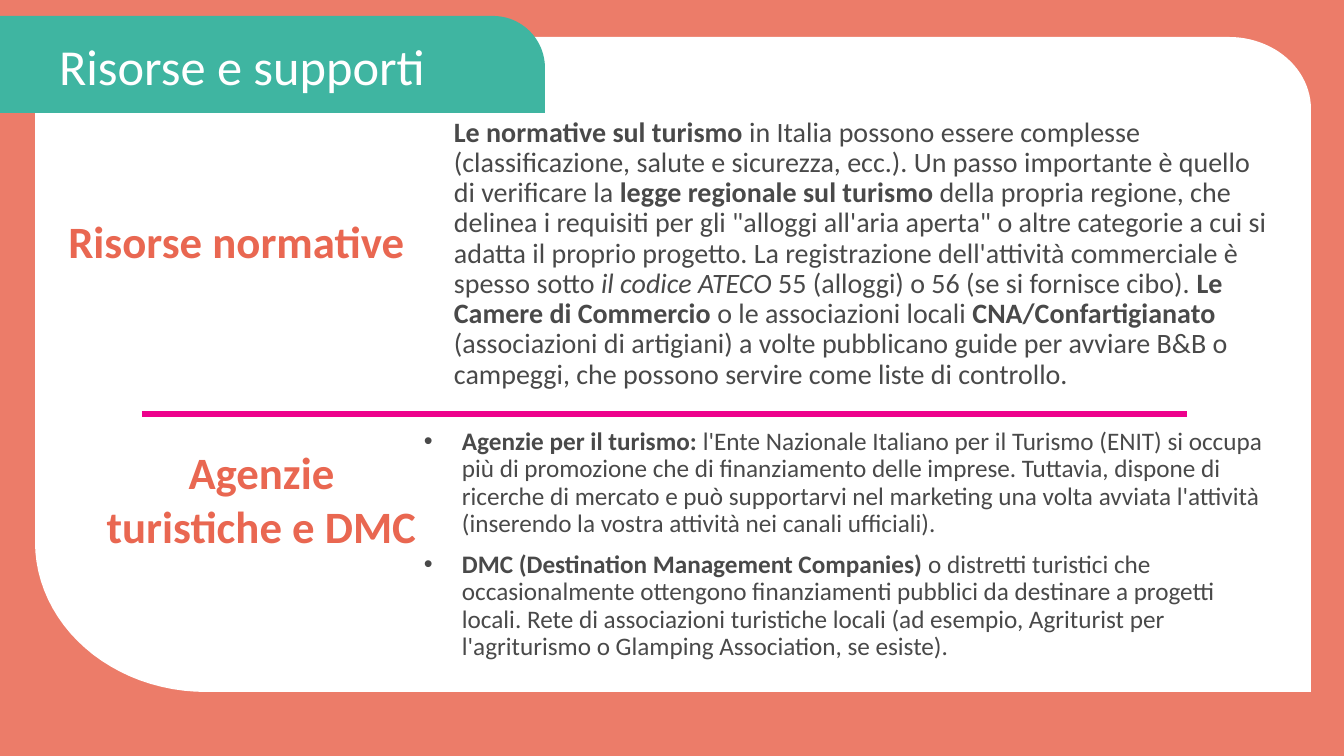
import math
import pptx
import pptx.util
import pptx.dml.color
import pptx.enum.shapes
import pptx.enum.text
import pptx.oxml.xmlchemy
from lxml import etree

PX = 914400 / 100.8
ALIGN = pptx.enum.text.PP_ALIGN
ANCHOR = pptx.enum.text.MSO_ANCHOR
CORAL, TEAL, PINK = "EC7C69", "3FB5A1", "ED028C"
GREY, RED, WHITE = "494949", "E96751", "FFFFFF"


def color(code):
    return pptx.dml.color.RGBColor.from_string(code)


def write(shape, box, paras, size, tint, align=ALIGN.LEFT, space=0.9, bullet=False):
    """Place a text shape and fill it with paragraphs of (text, style) runs."""
    for name, val in zip(("left", "top", "width", "height"), box):
        setattr(shape, name, round(val * PX))
    frame = shape.text_frame
    frame.word_wrap = True
    frame.auto_size = pptx.enum.text.MSO_AUTO_SIZE.NONE
    for num, runs in enumerate(paras):
        para = frame.add_paragraph() if num else frame.paragraphs[0]
        para.alignment, para.line_spacing = align, space
        para.space_before = pptx.util.Pt(10 if num else 0)
        if bullet:
            props = para._p.get_or_add_pPr()
            props.set("marL", str(round(38 * PX)))
            props.set("indent", str(round(-38 * PX)))
            for tag, key, val in (("buFont", "typeface", "Arial"), ("buChar", "char", "•")):
                etree.SubElement(props, pptx.oxml.ns.qn("a:" + tag)).set(key, val)
        for text, style in runs:
            run = para.add_run()
            run.text = text
            font = {"name": "Calibri", "size": pptx.util.Pt(size),
                    "bold": style == "b", "italic": style == "i"}
            for name, val in font.items():
                setattr(run.font, name, val)
            run.font.color.rgb = color(tint)


deck = pptx.Presentation()
deck.slide_width, deck.slide_height = round(1344 * PX), round(756 * PX)
slide = deck.slides.add_slide(deck.slide_layouts[5])
shapes = slide.shapes
slide.background.fill.solid()
slide.background.fill.fore_color.rgb = color(CORAL)

# White panel and title tab: top right and bottom left corners are rounded
STEPS = 24
for left, top, right, low, (rx, ry), (bx, by), fill in (
        (35, 37, 1311, 692, (82, 72), (171, 150), WHITE),
        (0, 16, 545, 113, (52, 52), (0, 0), TEAL)):
    turns = [math.pi / 2 * k / STEPS for k in range(STEPS + 1)]
    dots = [(right - rx + rx * math.sin(t), top + ry - ry * math.cos(t)) for t in turns]
    dots.append((right, low))
    dots += [(left + bx - bx * math.sin(t), low - by + by * math.cos(t)) for t in turns]
    form = shapes.build_freeform(round(left * PX), round(top * PX))
    form.add_line_segments([(round(x * PX), round(y * PX)) for x, y in dots])
    panel = form.convert_to_shape()
    panel.shadow.inherit = False
    panel.fill.solid()
    panel.fill.fore_color.rgb = color(fill)
    panel.line.fill.background()

title = shapes.title
panel.element.addnext(title.element)
write(title, (49, 29, 555, 80), [[("Risorse e supporti", "")]], 36, WHITE)
title.text_frame.vertical_anchor = ANCHOR.MIDDLE

rule = shapes.add_connector(pptx.enum.shapes.MSO_CONNECTOR.STRAIGHT,
                            *[round(v * PX) for v in (142, 414, 1187, 414)])
rule.line.color.rgb = color(PINK)
rule.line.width = pptx.util.Pt(4.5)
etree.SubElement(rule.element.spPr, pptx.oxml.ns.qn("a:effectLst"))

for box, text in (((39, 209, 405, 119), "Risorse normative "),
                  ((86, 440, 351, 228), "Agenzie turistiche e DMC")):
    write(shapes.add_textbox(0, 0, 0, 0), box, [[(text, "b")]], 32, RED, ALIGN.CENTER, 1.0)

rules = [[
    ("Le normative sul turismo ", "b"),
    ("in Italia possono essere complesse (classificazione, salute e sicurezza, ecc.). "
     "Un passo importante è quello di verificare la ", ""),
    ("legge regionale sul turismo ", "b"),
    ("della propria regione, che delinea i requisiti per gli \"alloggi all'aria aperta\" "
     "o altre categorie a cui si adatta il proprio progetto. La registrazione "
     "dell'attività commerciale è spesso sotto ", ""),
    ("il codice ATECO", "i"),
    (" 55 (alloggi) o 56 (se si fornisce cibo). ", ""),
    ("Le Camere di Commercio ", "b"),
    ("o le associazioni locali ", ""),
    ("CNA/Confartigianato ", "b"),
    ("(associazioni di artigiani) a volte pubblicano guide per avviare B&B o campeggi, "
     "che possono servire come liste di controllo.", ""),
]]
write(shapes.add_textbox(0, 0, 0, 0), (444, 113, 836, 244), rules, 20, GREY)

agents = [
    [("Agenzie per il turismo: ", "b"),
     ("l'Ente Nazionale Italiano per il Turismo (ENIT) si occupa più di promozione che di "
      "finanziamento delle imprese. Tuttavia, dispone di ricerche di mercato e può "
      "supportarvi nel marketing una volta avviata l'attività (inserendo la vostra "
      "attività nei canali ufficiali).", "")],
    [("DMC (Destination Management Companies) ", "b"),
     ("o distretti turistici che occasionalmente ottengono finanziamenti pubblici da "
      "destinare a progetti locali. Rete di associazioni turistiche locali (ad esempio, "
      "Agriturist per l'agriturismo o Glamping Association, se esiste).", "")],
]
write(shapes.add_textbox(0, 0, 0, 0), (414, 424, 865, 244), agents, 18, GREY, bullet=True)

deck.save("out.pptx")
